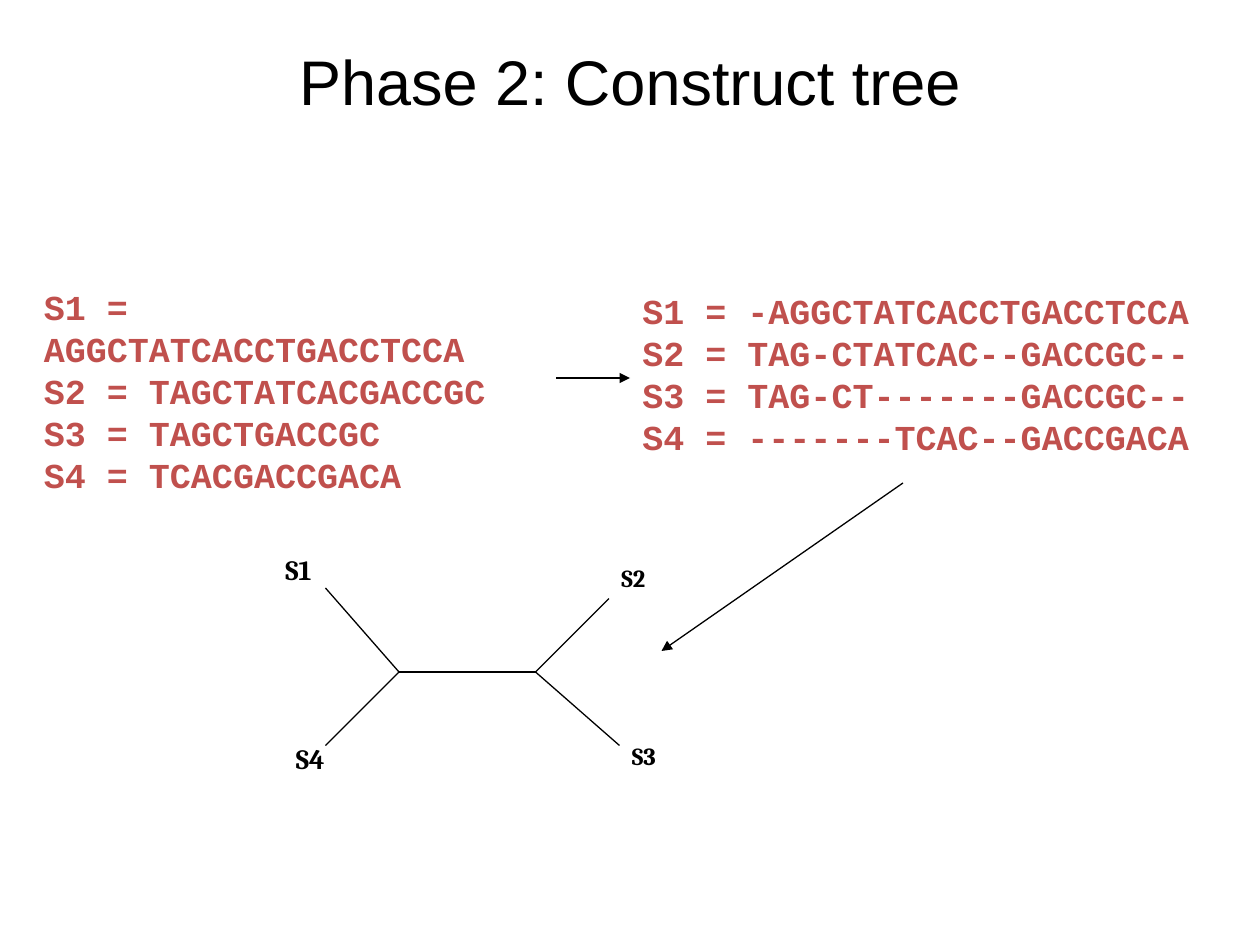
from dataclasses import dataclass
from typing import NamedTuple

from lxml import etree
from pptx import Presentation
from pptx.dml.color import RGBColor
from pptx.enum.shapes import MSO_CONNECTOR
from pptx.enum.text import MSO_ANCHOR, MSO_AUTO_SIZE, PP_ALIGN
from pptx.oxml.ns import qn
from pptx.util import Inches, Pt

STRAIGHT = MSO_CONNECTOR.STRAIGHT
CENTER, MIDDLE = PP_ALIGN.CENTER, MSO_ANCHOR.MIDDLE
GROW = MSO_AUTO_SIZE.SHAPE_TO_FIT_TEXT
UNITS_PER_INCH = 12  # the slide is a grid of 120 columns by 90 rows


class TextStyle(NamedTuple):
    font: str
    size: int
    color: RGBColor
    bold: bool = True


class Point(NamedTuple):
    column: float
    row: float


@dataclass(frozen=True)
class Theme:
    ink = RGBColor(0x00, 0x00, 0x00)
    line_width = 0.75
    title = TextStyle("Arial", 36, ink, False)
    sequence = TextStyle("Courier New", 20, RGBColor(0xC0, 0x50, 0x4D))
    left_leaf = TextStyle("Cambria", 16, ink)
    right_leaf = TextStyle("Cambria", 14, ink)


@dataclass(frozen=True)
class TextBlock:
    lines: list[str]
    corner: Point
    width: float
    height: float
    style: TextStyle


@dataclass(frozen=True)
class Line:
    start: Point
    end: Point
    arrow: bool = False


THEME = Theme()

# Sequences before and after alignment
ALIGNED = ["S1 = -AGGCTATCACCTGACCTCCA", "S2 = TAG-CTATCAC--GACCGC--",
           "S3 = TAG-CT-------GACCGC--", "S4 = -------TCAC--GACCGACA"]
UNALIGNED = ["S1 = AGGCTATCACCTGACCTCCA", "S2 = TAGCTATCACGACCGC",
             "S3 = TAGCTGACCGC", "S4 = TCACGACCGACA"]

BLOCKS = [
    TextBlock(ALIGNED, Point(60, 27), 55, 17.2, THEME.sequence),
    TextBlock(UNALIGNED, Point(3, 26.6), 52.3, 17.2, THEME.sequence),
    TextBlock(["S1"], Point(26, 52), 7, 4.4, THEME.left_leaf),
    TextBlock(["S4"], Point(27, 70), 7, 4.4, THEME.left_leaf),
    TextBlock(["S2"], Point(58, 53), 7, 4, THEME.right_leaf),
    TextBlock(["S3"], Point(59, 70), 7, 4, THEME.right_leaf),
]

# Inner nodes of the tree, its branches and the step arrows
LEFT_NODE, RIGHT_NODE = Point(38, 64), Point(51, 64)
LINES = [
    Line(Point(53, 36), Point(60, 36), arrow=True),
    Line(Point(31, 56), LEFT_NODE),
    Line(LEFT_NODE, RIGHT_NODE),
    Line(RIGHT_NODE, Point(58, 57)),
    Line(RIGHT_NODE, Point(59, 71)),
    Line(LEFT_NODE, Point(31, 71)),
    Line(Point(86, 46), Point(63, 62), arrow=True),
]


def grid(units: float) -> int:
    return Inches(units / UNITS_PER_INCH)


def format_text(text_frame, style: TextStyle) -> None:
    for paragraph in text_frame.paragraphs:
        for run in paragraph.runs:
            run.font.name = style.font
            run.font.size = Pt(style.size)
            run.font.bold = style.bold
            run.font.color.rgb = style.color


def add_title(slide, text: str) -> None:
    title = slide.shapes.title
    title.left, title.top = Inches(0.5), Inches(0.01)
    title.width, title.height = Inches(9), Inches(1.25)
    title.text_frame.text = text
    title.text_frame.vertical_anchor = MIDDLE
    title.text_frame.paragraphs[0].alignment = CENTER
    format_text(title.text_frame, THEME.title)


def add_block(slide, block: TextBlock) -> None:
    box = slide.shapes.add_textbox(grid(block.corner.column), grid(block.corner.row),
                                   grid(block.width), grid(block.height))
    text_frame = box.text_frame
    text_frame.word_wrap = True
    text_frame.auto_size = GROW
    text_frame.text = "\n".join(block.lines)
    format_text(text_frame, block.style)


def add_line(slide, line: Line) -> None:
    connector = slide.shapes.add_connector(
        STRAIGHT, *(grid(units) for units in (*line.start, *line.end)))
    connector.line.color.rgb = THEME.ink
    connector.line.width = Pt(THEME.line_width)
    if line.arrow:
        etree.SubElement(connector.line._get_or_add_ln(), qn("a:tailEnd"), type="triangle")
    etree.SubElement(connector._element.spPr, qn("a:effectLst"))


def main() -> None:
    presentation = Presentation()
    presentation.slide_width, presentation.slide_height = Inches(10), Inches(7.5)
    slide = presentation.slides.add_slide(presentation.slide_layouts.get_by_name("Title Only"))
    add_title(slide, "Phase 2: Construct tree")
    for block in BLOCKS:
        add_block(slide, block)
    for line in LINES:
        add_line(slide, line)
    presentation.save("out.pptx")


if __name__ == "__main__":
    main()
